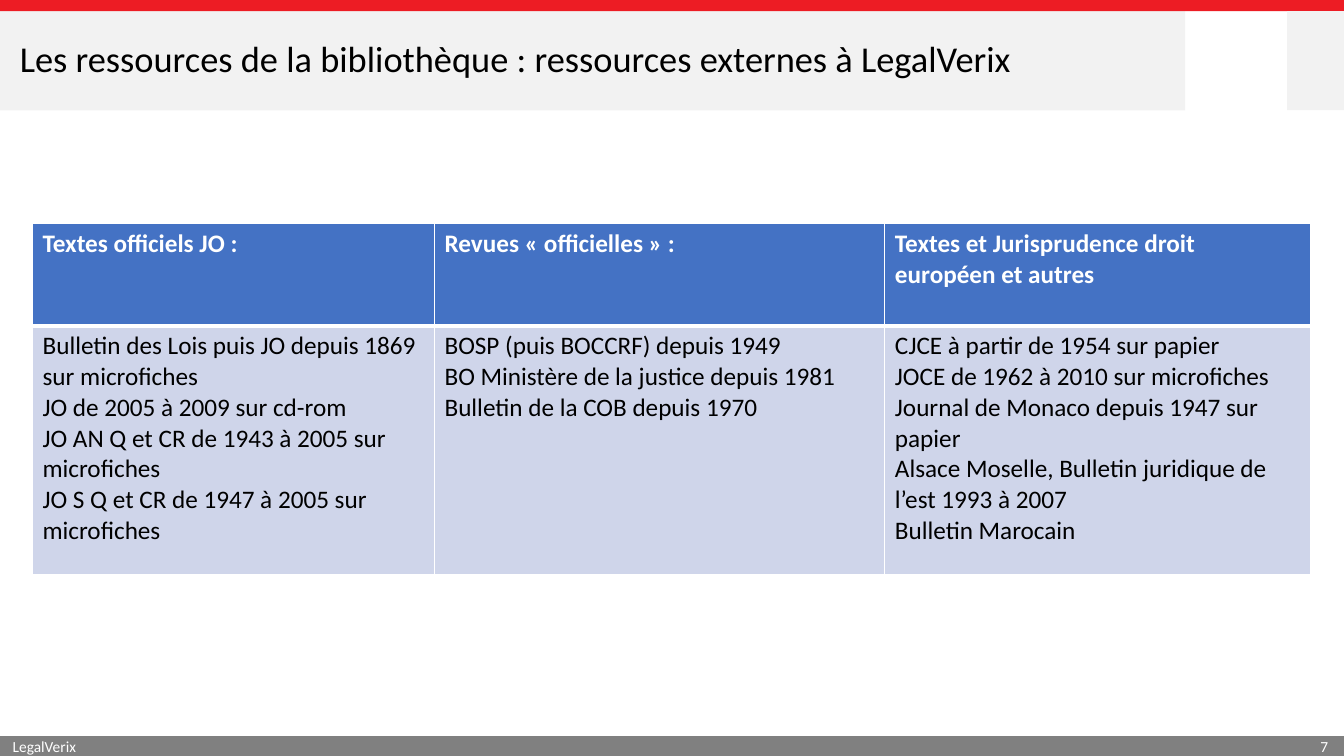
from lxml import etree
from pptx import Presentation
from pptx.dml.color import RGBColor
from pptx.enum.shapes import MSO_SHAPE
from pptx.enum.text import MSO_ANCHOR, MSO_AUTO_SIZE, PP_ALIGN
from pptx.oxml.ns import qn
from pptx.util import Cm, Pt

RECT = MSO_SHAPE.RECTANGLE
MIDDLE = MSO_ANCHOR.MIDDLE
NO_AUTOFIT = MSO_AUTO_SIZE.NONE
LEFT, RIGHT = PP_ALIGN.LEFT, PP_ALIGN.RIGHT

RED = RGBColor(0xED, 0x1C, 0x24)
GREY = RGBColor(0x80, 0x80, 0x80)
PALE = RGBColor(0xF2, 0xF2, 0xF2)
BLUE = RGBColor(0x44, 0x72, 0xC4)
LAVENDER = RGBColor(0xCF, 0xD5, 0xEA)
WHITE = RGBColor(0xFF, 0xFF, 0xFF)
BLACK = RGBColor(0, 0, 0)
FONT = "Calibri"

TITLE = "Les ressources de la bibliothèque : ressources externes à LegalVerix"
COLUMNS = [
    ("Textes officiels JO :", [
        "Bulletin des Lois puis JO depuis 1869 sur microfiches",
        "JO de 2005 à 2009 sur cd-rom",
        "JO AN Q et CR de 1943 à 2005 sur microfiches",
        "JO S Q et CR de 1947 à 2005 sur microfiches",
    ]),
    ("Revues « officielles » :", [
        "BOSP (puis BOCCRF) depuis 1949",
        "BO Ministère de la justice depuis 1981",
        "Bulletin de la COB depuis 1970",
    ]),
    ("Textes et Jurisprudence droit européen et autres", [
        "CJCE à partir de 1954 sur papier",
        "JOCE de 1962 à 2010 sur microfiches",
        "Journal de Monaco depuis 1947 sur papier",
        "Alsace Moselle, Bulletin juridique de l’est 1993 à 2007",
        "Bulletin Marocain",
    ]),
]
COLUMN_WIDTHS = [Cm(10.13), Cm(11.35), Cm(10.74)]
ROW_HEIGHTS = [Cm(2.57), Cm(6.27)]

SLIDE_W, SLIDE_H = Cm(33.87), Cm(19.05)
FOOTER_H = Cm(0.5)
FOOTER_TOP = SLIDE_H - FOOTER_H
RED_H = Cm(0.28)
TITLE_W, TITLE_H = Cm(29.87), Cm(2.5)
CORNER_W = Cm(1.43)

BARS = [
    (0, FOOTER_TOP, SLIDE_W, FOOTER_H, GREY),
    (0, 0, SLIDE_W, RED_H, RED),
    (SLIDE_W - CORNER_W, RED_H, CORNER_W, TITLE_H, PALE),
]
FOOTERS = [
    ("LegalVerix", Cm(-0.08), Cm(22), LEFT),
    ("7", TITLE_W, SLIDE_W - TITLE_W, RIGHT),
]


def write(tf, lines, size, color, align=LEFT, bold=False):
    for i, line in enumerate(lines):
        p = tf.paragraphs[0] if i == 0 else tf.add_paragraph()
        p.alignment = align
        r = p.add_run()
        r.text = line
        r.font.name = FONT
        r.font.size = Pt(size)
        r.font.bold = bold
        r.font.color.rgb = color


def frame(tf, side):
    """Centre the text vertically, with side insets only."""
    tf.word_wrap = True
    tf.auto_size = NO_AUTOFIT
    tf.vertical_anchor = MIDDLE
    tf.margin_left = tf.margin_right = side
    tf.margin_top = tf.margin_bottom = 0


def set_borders(cell, top, bottom):
    tc_pr = cell._tc.get_or_add_tcPr()
    for side, width in (("L", 1), ("R", 1), ("T", top), ("B", bottom)):
        ln = etree.SubElement(tc_pr, qn(f"a:ln{side}"), w=str(Pt(width)))
        fill = etree.SubElement(ln, qn("a:solidFill"))
        etree.SubElement(fill, qn("a:srgbClr"), val=str(WHITE))


def fill_cell(cell, lines, fill, color, bold, top, bottom):
    set_borders(cell, top, bottom)
    cell.fill.solid()
    cell.fill.fore_color.rgb = fill
    write(cell.text_frame, lines, 18, color, bold=bold)


prs = Presentation()
prs.slide_width, prs.slide_height = SLIDE_W, SLIDE_H
s = prs.slides.add_slide(prs.slide_layouts[5])

title = s.shapes.title
title.left, title.top, title.width, title.height = 0, RED_H, TITLE_W, TITLE_H
title.fill.solid()
title.fill.fore_color.rgb = PALE
frame(title.text_frame, Cm(0.5))
write(title.text_frame, [TITLE], 26, BLACK)
title.text_frame.paragraphs[0].line_spacing = 0.9

for left, top, width, height, color in BARS:
    bar = s.shapes.add_shape(RECT, left, top, width, height)
    bar.shadow.inherit = False
    bar.fill.solid()
    bar.fill.fore_color.rgb = color
    bar.line.fill.background()

table = s.shapes.add_table(2, len(COLUMNS), Cm(0.82), Cm(5.64),
                           sum(COLUMN_WIDTHS), sum(ROW_HEIGHTS)).table
for row, height in zip(table.rows, ROW_HEIGHTS):
    row.height = height
for c, (heading, entries) in enumerate(COLUMNS):
    table.columns[c].width = COLUMN_WIDTHS[c]
    fill_cell(table.cell(0, c), [heading], BLUE, WHITE, True, 1, 3)
    fill_cell(table.cell(1, c), entries, LAVENDER, BLACK, False, 3, 1)

for text, left, width, align in FOOTERS:
    tf = s.shapes.add_textbox(left, FOOTER_TOP, width, FOOTER_H).text_frame
    frame(tf, Cm(0.4))
    write(tf, [text], 11, WHITE, align)

prs.save("out.pptx")
